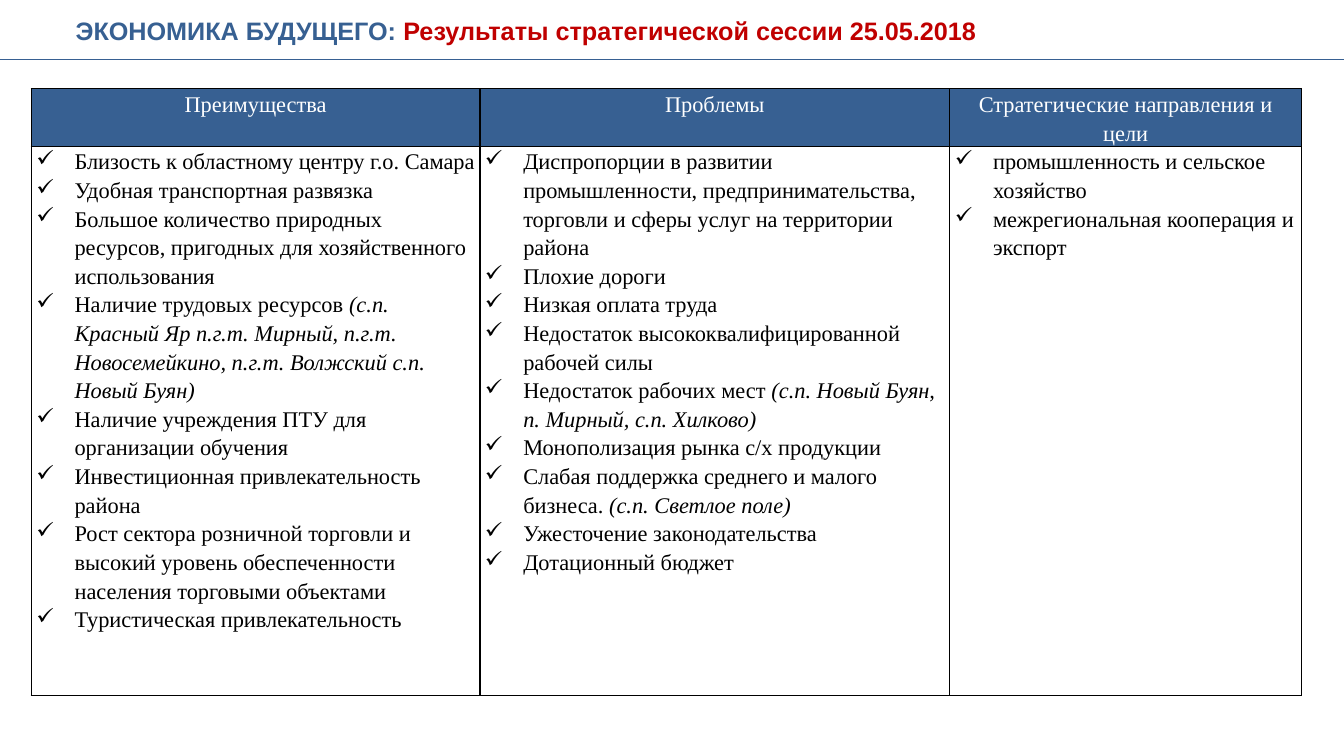
from lxml import etree
from pptx import Presentation, util as u
from pptx.dml.color import RGBColor
from pptx.enum import shapes, text
from pptx.oxml.ns import qn

COLORS = {"blue": "376092", "red": "C00000", "white": "FFFFFF", "black": "000000"}
COL_WIDTHS = [4.45, 4.66, 3.49]
ROW_HEIGHTS = [0.57, 5.45]
INDENT = u.Inches(0.38)

# Each list item is (plain text, italic text)
COLUMNS = [
    ("Преимущества", [
        ("Близость к областному центру г.о. Самара", ""),
        ("Удобная транспортная развязка", ""),
        ("Большое количество природных ресурсов, пригодных для хозяйственного использования", ""),
        ("Наличие трудовых ресурсов ",
         "(с.п. Красный Яр п.г.т. Мирный, п.г.т. Новосемейкино, п.г.т. Волжский с.п. Новый Буян)"),
        ("Наличие учреждения ПТУ для организации обучения", ""),
        ("Инвестиционная привлекательность района", ""),
        ("Рост сектора розничной торговли и высокий уровень обеспеченности "
         "населения торговыми объектами", ""),
        ("Туристическая привлекательность", ""),
    ]),
    ("Проблемы", [
        ("Диспропорции в развитии промышленности, предпринимательства, "
         "торговли и сферы услуг на территории района", ""),
        ("Плохие дороги", ""),
        ("Низкая оплата труда", ""),
        ("Недостаток высококвалифицированной рабочей силы", ""),
        ("Недостаток рабочих мест ", "(с.п. Новый Буян, п. Мирный, с.п. Хилково)"),
        ("Монополизация рынка с/х продукции", ""),
        ("Слабая поддержка среднего и малого бизнеса. ", "(с.п. Светлое поле)"),
        ("Ужесточение законодательства", ""),
        ("Дотационный бюджет", ""),
    ]),
    ("Стратегические направления и цели", [
        ("промышленность и сельское хозяйство", ""),
        ("межрегиональная кооперация и экспорт", ""),
    ]),
]


def rgb(name):
    return RGBColor.from_string(COLORS[name])


def add_line(p, plain, italic, color):
    """Fill a table paragraph with plain text and an optional italic tail."""
    p.line_spacing = 1.15
    p.font.name, p.font.size = "Times New Roman", u.Pt(16)
    p.font.color.rgb = rgb(color)
    p.add_run().text = plain
    if italic:
        r = p.add_run()
        r.text = italic
        r.font.italic = True


prs = Presentation()
prs.slide_width, prs.slide_height = u.Inches(13.33), u.Inches(7.5)
slide = prs.slides.add_slide(prs.slide_layouts[5])

# Rule under the title
rule = slide.shapes.add_connector(shapes.MSO_CONNECTOR.STRAIGHT, 0, u.Inches(0.59),
                                  prs.slide_width, u.Inches(0.59))
rule.line.color.rgb = rgb("blue")
rule.line.width = u.Pt(0.75)
etree.SubElement(rule._element.spPr, qn("a:effectLst"))

# Title
title = slide.shapes.title
title.left, title.top = u.Inches(0.65), u.Inches(0.11)
title.width, title.height = u.Inches(11.61), u.Inches(0.39)
tf = title.text_frame
tf.auto_size = text.MSO_AUTO_SIZE.NONE
tf.vertical_anchor = text.MSO_ANCHOR.MIDDLE
p = tf.paragraphs[0]
p.alignment = text.PP_ALIGN.JUSTIFY
p.font.name, p.font.size, p.font.bold = "Arial", u.Pt(18), True
for part, color in [("ЭКОНОМИКА БУДУЩЕГО: ", "blue"),
                    ("Результаты стратегической сессии 25.05.2018", "red")]:
    r = p.add_run()
    r.text = part
    r.font.color.rgb = rgb(color)

# Table
table = slide.shapes.add_table(2, 3, u.Inches(0.31), u.Inches(0.88), u.Inches(sum(COL_WIDTHS)),
                               u.Inches(sum(ROW_HEIGHTS))).table
table.first_row = table.horz_banding = False
for col, width in zip(table.columns, COL_WIDTHS):
    col.width = u.Inches(width)
for row, height in zip(table.rows, ROW_HEIGHTS):
    row.height = u.Inches(height)

for cell in table.iter_cells():
    cell.margin_left = cell.margin_right = u.Inches(0.05)
    cell.margin_top = cell.margin_bottom = 0
    for side in ("lnL", "lnR", "lnT", "lnB"):
        ln = etree.SubElement(cell._tc.get_or_add_tcPr(), qn(f"a:{side}"), w=str(u.Pt(1)))
        fill = etree.SubElement(ln, qn("a:solidFill"))
        etree.SubElement(fill, qn("a:srgbClr"), val=COLORS["black"])

for i, (heading, items) in enumerate(COLUMNS):
    head, body = table.cell(0, i), table.cell(1, i)
    head.fill.solid()
    head.fill.fore_color.rgb = rgb("blue")
    body.fill.background()

    p = head.text_frame.paragraphs[0]
    p.alignment = text.PP_ALIGN.CENTER
    add_line(p, heading, "", "white")

    tf = body.text_frame
    for n, (plain, italic) in enumerate(items):
        p = tf.add_paragraph() if n else tf.paragraphs[0]
        add_line(p, plain, italic, "black")
        pPr = p._p.get_or_add_pPr()
        pPr.set("marL", str(INDENT))
        pPr.set("indent", str(-INDENT))
        bullet = etree.Element(qn("a:buChar"), char="✓")
        pPr.find(qn("a:lnSpc")).addnext(bullet)

prs.save("out.pptx")
